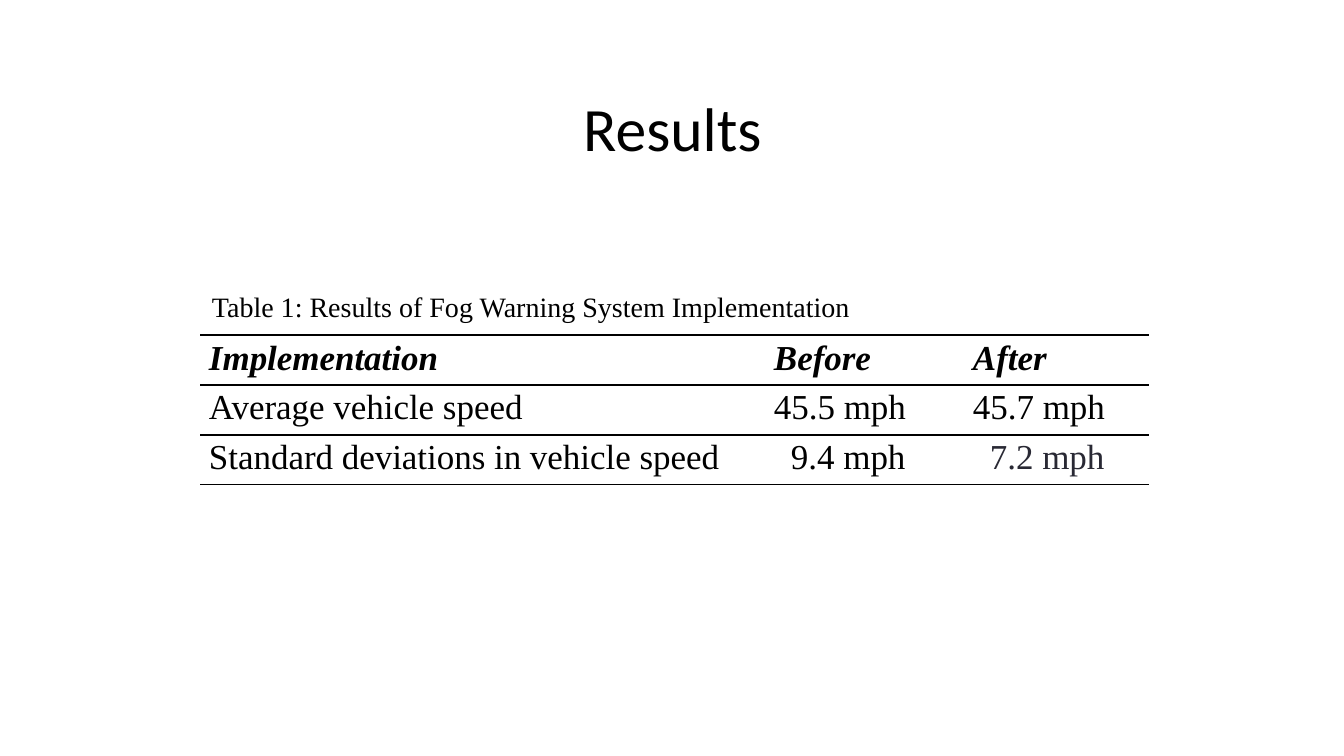
"""Build the Results slide with its captioned table of vehicle speeds."""
from dataclasses import dataclass

from lxml.etree import SubElement
from pptx import Presentation
from pptx.dml.color import RGBColor
from pptx.enum.text import MSO_ANCHOR as Anchor, PP_ALIGN as Align
from pptx.oxml.ns import qn
from pptx.util import Emu, Pt

COLORS = {"text": "000000", "rule": "000000", "muted": "292934"}
SERIF = "Times New Roman"


@dataclass(frozen=True)
class Box:
    left: int
    top: int
    width: int
    height: int


@dataclass(frozen=True)
class Entry:
    text: str
    bold: bool = False
    color: str = "text"
    indent: int = 0


TITLE = Box(202, 84, 941, 85)
CAPTION = Box(202, 285, 832, 44)
TABLE = Box(200, 335, 949, 150)
COL_WIDTHS = (565, 199, 185)
ROWS = (
    tuple(Entry(name, bold=True) for name in ("Implementation", "Before", "After")),
    (Entry("Average vehicle speed"), Entry("45.5 mph"), Entry("45.7 mph")),
    (
        Entry("Standard deviations in vehicle speed"),
        Entry("9.4 mph", indent=17),
        Entry("7.2 mph", color="muted", indent=17),
    ),
)


def px(n: int) -> Emu:
    """Turn px into EMU at 100.8 px to the inch."""
    return Emu(round(n * 914400 / 100.8))


def place(box: Box) -> tuple[Emu, Emu, Emu, Emu]:
    """Return the box as EMU arguments."""
    return px(box.left), px(box.top), px(box.width), px(box.height)


def write(tf, text: str, *, size: int, font: str = SERIF, color: str = "text",
          bold: bool = False, italic: bool = False, align=Align.LEFT,
          indent: int = 0) -> None:
    """Write one formatted paragraph into a text frame."""
    p = tf.paragraphs[0]
    p.alignment = align
    if indent:
        p._p.get_or_add_pPr().set("marL", str(px(indent)))
    r = p.add_run()
    r.text = text
    r.font.size, r.font.name = Pt(size), font
    r.font.bold, r.font.italic = bold, italic
    r.font.color.rgb = RGBColor.from_string(COLORS[color])


def rule_cell(cell) -> None:
    """Give a cell rules above and below, and none at its sides."""
    tc_pr = cell._tc.get_or_add_tcPr()
    for side in "LRTB":
        ln = SubElement(tc_pr, qn(f"a:ln{side}"), w=str(Pt(1)))
        if side in "LR":
            SubElement(ln, qn("a:noFill"))
        else:
            fill = SubElement(ln, qn("a:solidFill"))
            SubElement(fill, qn("a:srgbClr"), val=COLORS["rule"])


def add_results(slide) -> None:
    """Add the table of results."""
    table = slide.shapes.add_table(len(ROWS), len(COL_WIDTHS), *place(TABLE)).table
    table.first_row = table.horz_banding = False
    for col, width in zip(table.columns, COL_WIDTHS):
        col.width = px(width)
    for i, entries in enumerate(ROWS):
        table.rows[i].height = px(TABLE.height // len(ROWS))
        for j, entry in enumerate(entries):
            cell = table.cell(i, j)
            cell.margin_left = cell.margin_right = px(9)
            cell.margin_top = cell.margin_bottom = px(4)
            rule_cell(cell)
            cell.fill.background()
            write(cell.text_frame, entry.text, size=25, color=entry.color,
                  bold=entry.bold, italic=entry.bold, indent=entry.indent)


def main() -> None:
    """Build and save the slide."""
    prs = Presentation()
    prs.slide_width, prs.slide_height = px(1344), px(756)
    slide = prs.slides.add_slide(prs.slide_layouts[5])

    title = slide.shapes.title
    title.left, title.top, title.width, title.height = place(TITLE)
    title.text_frame.vertical_anchor = Anchor.MIDDLE
    write(title.text_frame, "Results", size=44, font="Calibri", align=Align.CENTER)

    add_results(slide)

    tf = slide.shapes.add_textbox(*place(CAPTION)).text_frame
    tf.word_wrap = True
    write(tf, "Table 1: Results of Fog Warning System Implementation", size=20)

    prs.save("out.pptx")


if __name__ == "__main__":
    main()
